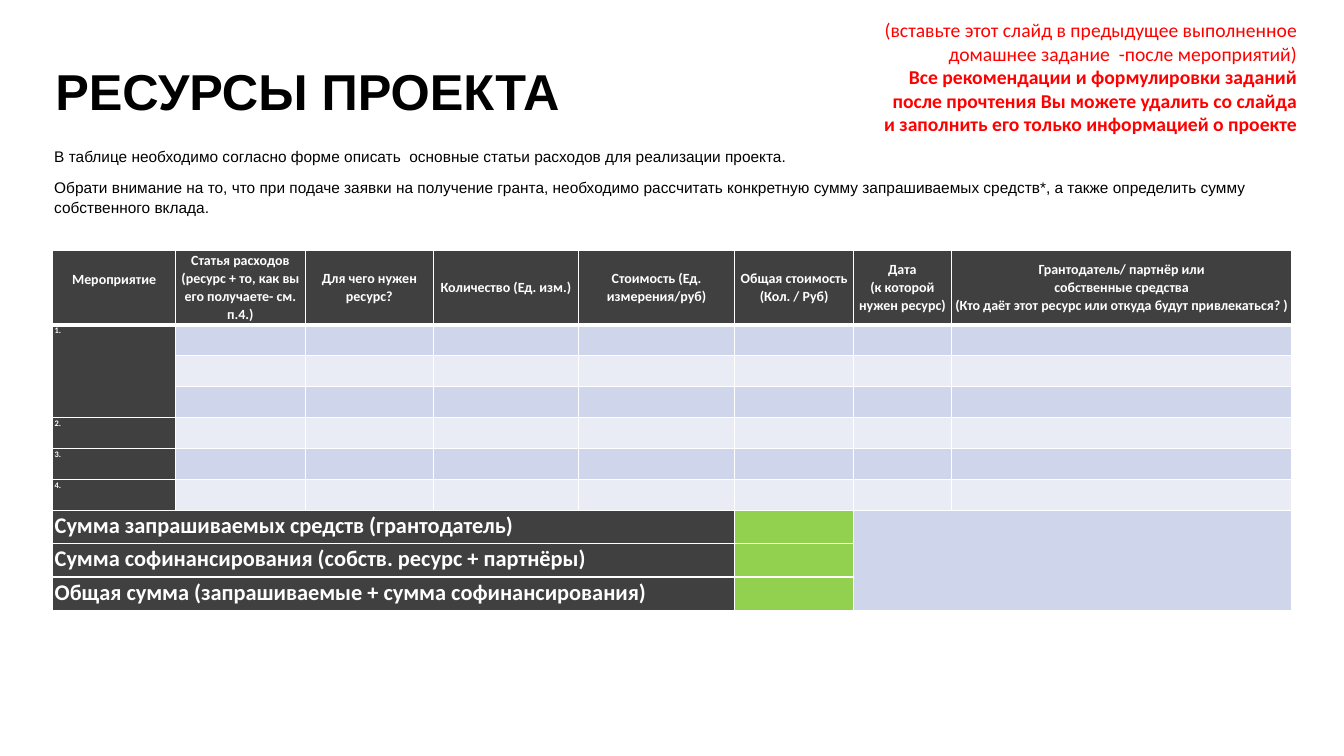
from dataclasses import dataclass

from lxml import etree
from pptx import Presentation
from pptx.dml.color import RGBColor
from pptx.enum import text
from pptx.oxml import ns
from pptx.util import Pt

COLORS = {"black": "000000", "white": "FFFFFF", "red": "FF0000", "dark": "404040",
          "band": "CFD5EA", "light": "E9EBF5", "sum": "92D050"}
LEFT, CENTER, RIGHT = text.PP_ALIGN.LEFT, text.PP_ALIGN.CENTER, text.PP_ALIGN.RIGHT


@dataclass
class Style:
    size: float
    font: str = "Calibri"
    color: str = "white"
    bold: bool = True
    align: text.PP_ALIGN = LEFT
    line_spacing: float = 1.0
    space_after: float = 0


@dataclass
class TextBox:
    left: float
    top: float
    width: float
    height: float
    paragraphs: list[tuple[str, Style]]


INTRO = Style(11, "Arial", "black", False, line_spacing=1.07, space_after=8)
HEADER = Style(10, align=CENTER, line_spacing=1.07, space_after=8)
NUMBER = Style(6, line_spacing=1.07, space_after=8)
TOTAL = Style(16, line_spacing=1.07, space_after=8)

TITLE_BOX = TextBox(32.4, 39.6, 706.3, 51.1,
                    [("РЕСУРСЫ ПРОЕКТА", Style(36, "Arial", "black"))])
HINT_BOX = TextBox(624.2, 9.4, 309.6, 92.2, [
    ("(вставьте этот слайд в предыдущее выполненное домашнее задание  -после мероприятий)",
     Style(14, color="red", bold=False, align=RIGHT)),
    ("Все рекомендации и формулировки заданий после прочтения Вы можете удалить "
     "со слайда и заполнить его только информацией о проекте",
     Style(14, color="red", align=RIGHT)),
])
INTRO_BOX = TextBox(31.7, 100.8, 895.7, 72, [
    ("В таблице необходимо согласно форме описать  основные статьи расходов "
     "для реализации проекта.", INTRO),
    ("Обрати внимание на то, что при подаче заявки на получение гранта, необходимо "
     "рассчитать конкретную сумму запрашиваемых средств*, а также определить сумму "
     "собственного вклада.", INTRO),
])

HEADINGS = [
    "Мероприятие",
    "Статья расходов (ресурс + то, как вы его получаете- см. п.4.)",
    "Для чего нужен ресурс?",
    "Количество (Ед. изм.)",
    "Стоимость (Ед. измерения/руб)",
    "Общая стоимость (Кол. / Руб)",
    "Дата\n(к которой нужен ресурс)",
    "Грантодатель/ партнёр или\nсобственные средства\n"
    "(Кто даёт этот ресурс или откуда будут привлекаться? )",
]
EVENT_ROWS = {1: "1.", 4: "2.", 5: "3.", 6: "4."}
TOTALS = [
    "Сумма запрашиваемых средств (грантодатель)",
    "Сумма софинансирования (собств. ресурс + партнёры)",
    "Общая сумма (запрашиваемые + сумма софинансирования)",
]
COLUMN_WIDTHS = [87.6, 92.8, 91.4, 103.7, 111.6, 84.9, 69.8, 243.3]
ROW_HEIGHTS = [53.3] + [22.1] * 6 + [23.9] * 3
FIRST_TOTAL_ROW, SUM_COLUMN = 7, 5


def rgb(name: str) -> RGBColor:
    return RGBColor.from_string(COLORS[name])


def write(paragraph, content: str, style: Style) -> None:
    paragraph.text = content
    paragraph.alignment = style.align
    paragraph.line_spacing = style.line_spacing
    paragraph.space_after = Pt(style.space_after)
    font = paragraph.font
    font.size, font.name, font.bold = Pt(style.size), style.font, style.bold
    font.color.rgb = rgb(style.color)


def add_text_box(slide, box: TextBox) -> None:
    shape = slide.shapes.add_textbox(Pt(box.left), Pt(box.top), Pt(box.width), Pt(box.height))
    frame = shape.text_frame
    frame.word_wrap = True
    frame.auto_size = text.MSO_AUTO_SIZE.SHAPE_TO_FIT_TEXT
    for index, (content, style) in enumerate(box.paragraphs):
        paragraph = frame.paragraphs[0] if index == 0 else frame.add_paragraph()
        write(paragraph, content, style)


def set_borders(cell, row: int) -> None:
    """White lines all round, thicker between the header and the body."""
    widths = {"lnL": 1, "lnR": 1, "lnT": 3 if row == 1 else 1, "lnB": 3 if row == 0 else 1}
    properties = cell._tc.get_or_add_tcPr()
    for tag, width in widths.items():
        line = etree.SubElement(properties, ns.qn(f"a:{tag}"), w=str(Pt(width)))
        fill = etree.SubElement(line, ns.qn("a:solidFill"))
        etree.SubElement(fill, ns.qn("a:srgbClr"), val=COLORS["white"])


def cell_color(row: int, column: int) -> str:
    if row == 0 or column == 0:
        return "dark"
    if row >= FIRST_TOTAL_ROW:
        if column == SUM_COLUMN:
            return "sum"
        return "dark" if column < SUM_COLUMN else "band"
    return "band" if row % 2 else "light"


def cell_content(row: int, column: int) -> tuple[str, Style]:
    if row == 0:
        return HEADINGS[column], HEADER
    if column > 0:
        return "", NUMBER
    if row >= FIRST_TOTAL_ROW:
        return TOTALS[row - FIRST_TOTAL_ROW], TOTAL
    return EVENT_ROWS.get(row, ""), NUMBER


def fill_cell(cell, row: int, column: int) -> None:
    cell.margin_left = cell.margin_right = Pt(1.4)
    cell.margin_top = cell.margin_bottom = 0
    if row == 0:
        cell.vertical_anchor = text.MSO_ANCHOR.MIDDLE
    content, style = cell_content(row, column)
    paragraph = cell.text_frame.paragraphs[0]
    write(paragraph, content, style)
    if not content:
        etree.SubElement(paragraph._p, ns.qn("a:endParaRPr"), sz=str(style.size * 100))
    set_borders(cell, row)
    cell.fill.solid()
    cell.fill.fore_color.rgb = rgb(cell_color(row, column))


def add_resource_table(slide) -> None:
    table = slide.shapes.add_table(
        len(ROW_HEIGHTS), len(COLUMN_WIDTHS), Pt(37.7), Pt(178.6),
        Pt(sum(COLUMN_WIDTHS)), Pt(sum(ROW_HEIGHTS))).table
    table.first_row = table.horz_banding = False
    for column, width in zip(table.columns, COLUMN_WIDTHS):
        column.width = Pt(width)
    for row, height in enumerate(ROW_HEIGHTS):
        table.rows[row].height = Pt(height)
        for column in range(len(COLUMN_WIDTHS)):
            fill_cell(table.cell(row, column), row, column)
    table.cell(0, 0).margin_bottom = Pt(12)

    last_row = len(ROW_HEIGHTS) - 1
    table.cell(1, 0).merge(table.cell(3, 0))
    for row in range(FIRST_TOTAL_ROW, last_row + 1):
        table.cell(row, 0).merge(table.cell(row, SUM_COLUMN - 1))
    table.cell(FIRST_TOTAL_ROW, SUM_COLUMN + 1).merge(
        table.cell(last_row, len(COLUMN_WIDTHS) - 1))


def main() -> None:
    presentation = Presentation()
    presentation.slide_width, presentation.slide_height = Pt(960), Pt(540)
    slide = presentation.slides.add_slide(presentation.slide_layouts[6])
    for box in (TITLE_BOX, HINT_BOX):
        add_text_box(slide, box)
    add_resource_table(slide)
    add_text_box(slide, INTRO_BOX)
    presentation.save("out.pptx")


if __name__ == "__main__":
    main()
